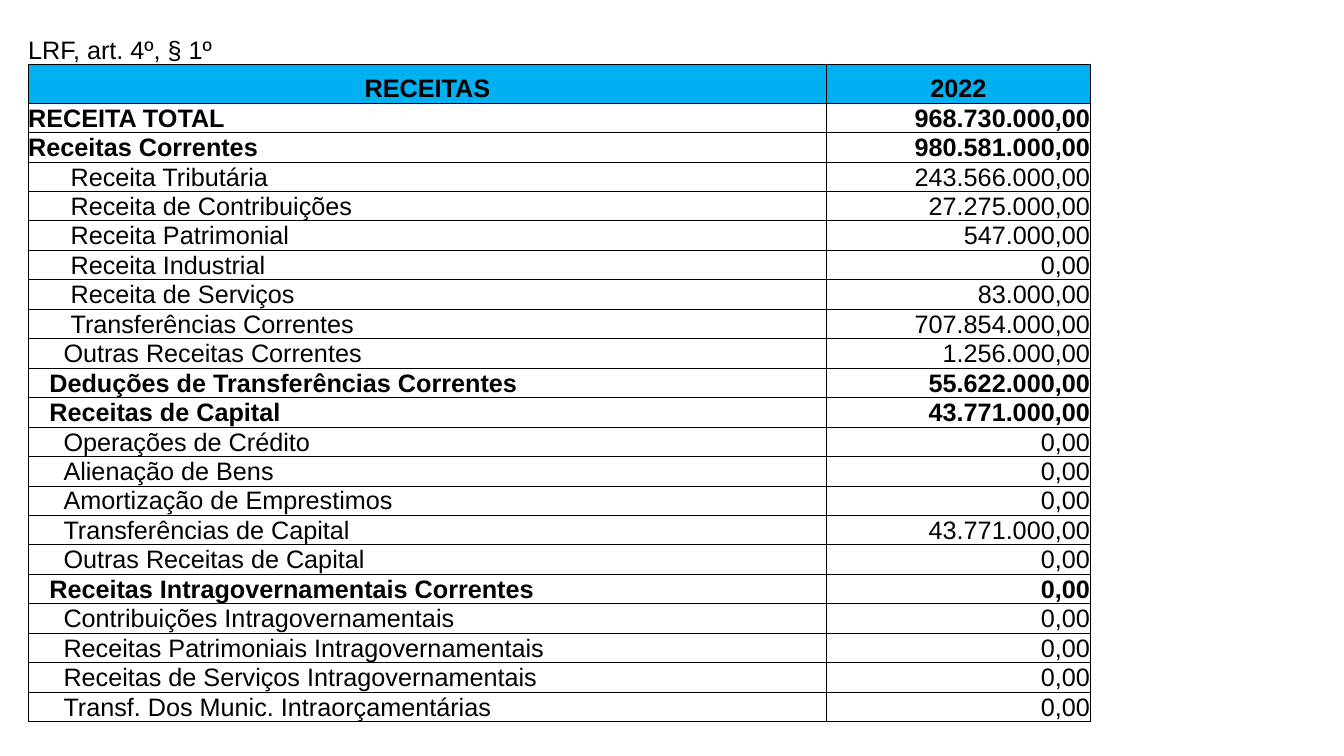
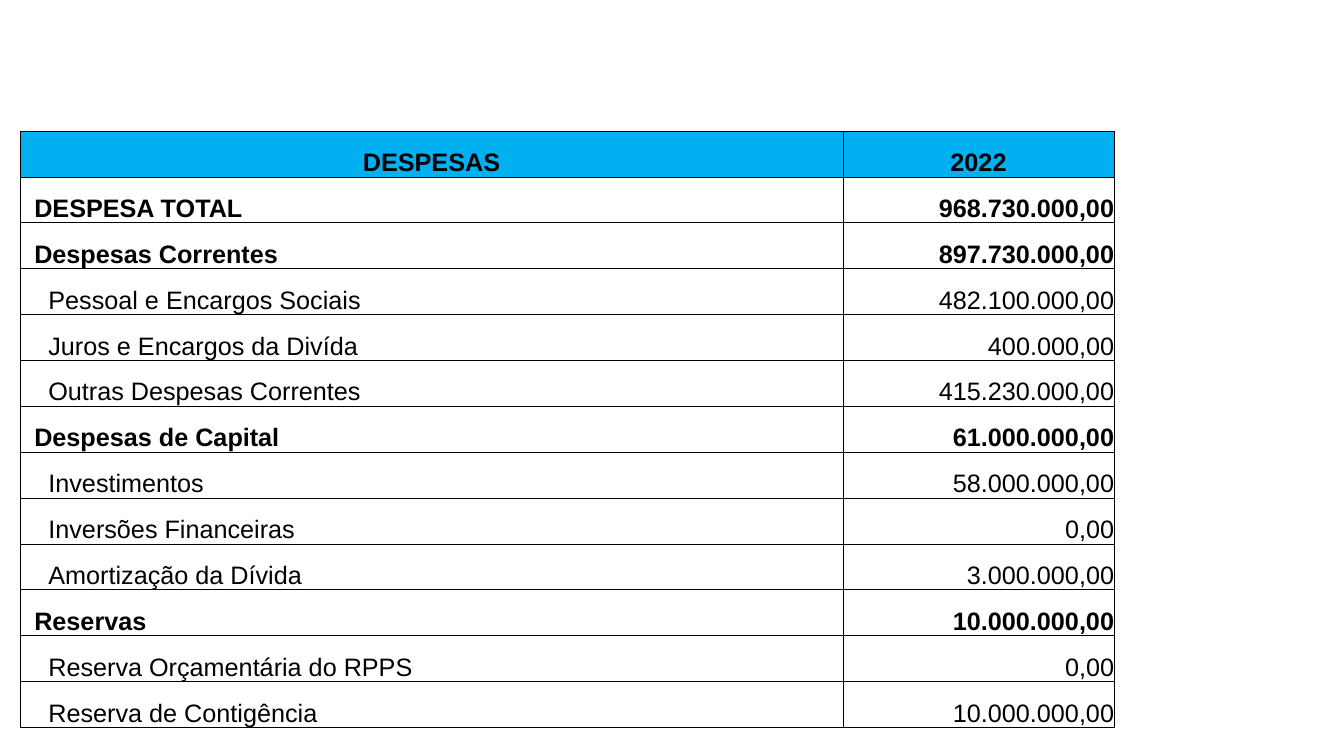
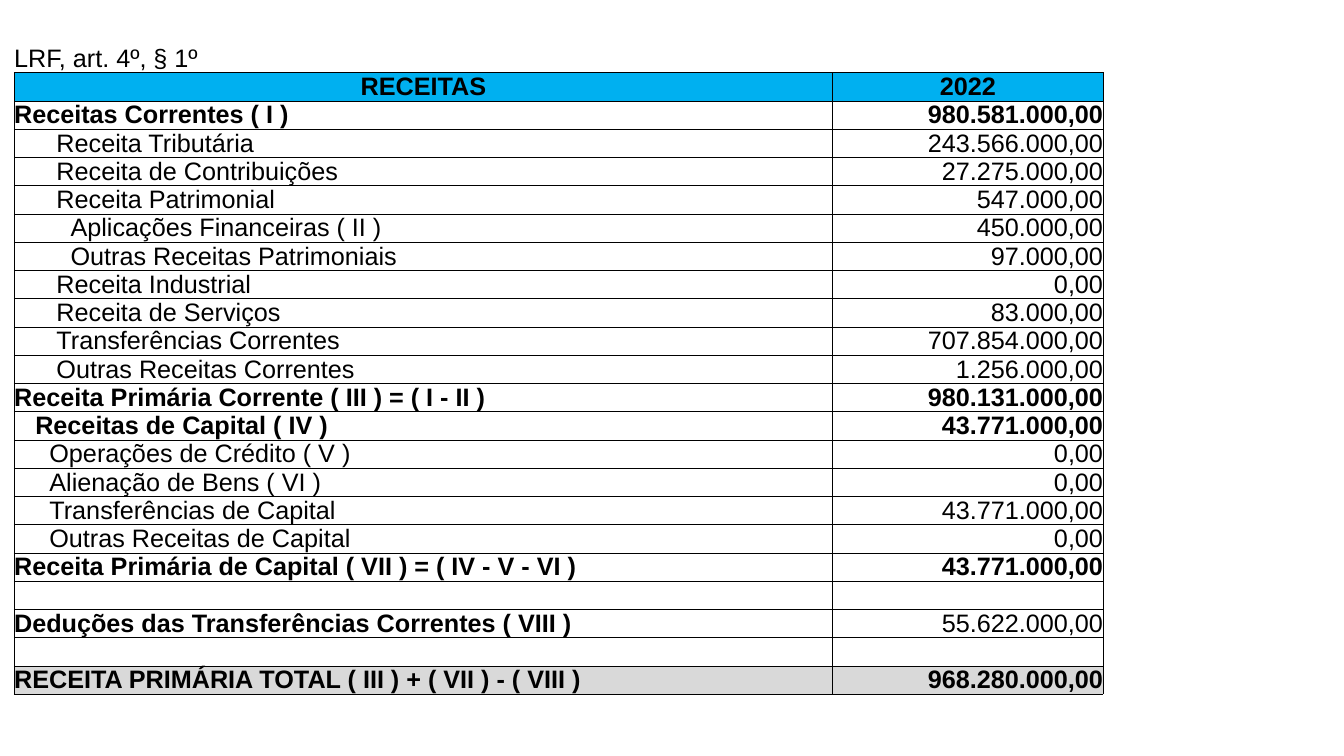
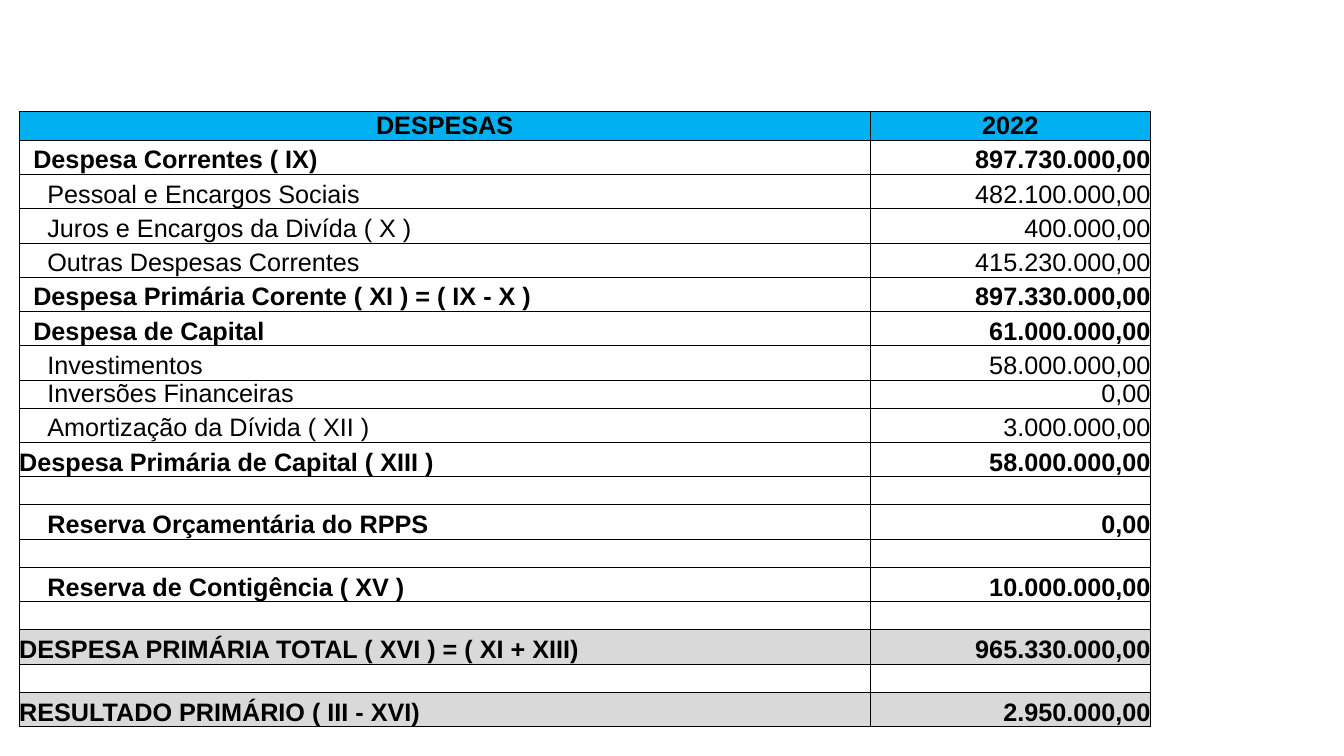
from dataclasses import dataclass
from functools import partial
from typing import Optional

from lxml import etree
from pptx import Presentation
from pptx import util as u
from pptx.dml.color import RGBColor
from pptx.enum import text
from pptx.oxml import ns

BLACK = RGBColor(0x00, 0x00, 0x00)
HEADER_BLUE = RGBColor(0x00, 0xB0, 0xF0)
TOTAL_GREY = RGBColor(0xD9, 0xD9, 0xD9)
FONT = "Arial"
TEXT_SIZE = u.Pt(18)
BLANK_SIZE = u.Pt(12)
BORDER = u.Pt(0.5)
INDENT_STEP = u.Inches(0.07)
ALL_SIDES = ("L", "R", "T", "B")
LEFT, CENTER, RIGHT = (text.PP_ALIGN.LEFT, text.PP_ALIGN.CENTER,
                       text.PP_ALIGN.RIGHT)


@dataclass(frozen=True)
class Line:
    """One table row; indent counts steps, height overrides the usual one."""
    label: str = ""
    amount: str = ""
    indent: int = 0
    bold: bool = False
    amount_bold: Optional[bool] = None
    fill: Optional[RGBColor] = None
    align: tuple = (LEFT, RIGHT)
    sides: tuple = ALL_SIDES
    height: Optional[float] = None


@dataclass(frozen=True)
class Budget:
    left: float
    top: float
    widths: tuple
    row_height: float
    lines: list


Heading = partial(Line, bold=True)
Total = partial(Line, bold=True, fill=TOTAL_GREY)
Header = partial(Line, amount="2022", bold=True, fill=HEADER_BLUE,
                 align=(CENTER, CENTER))
CAPTION = Line("LRF, art. 4º, § 1º", sides=("B",))
BLANK = Line(height=0.28)

REVENUE = Budget(0.28, 0.35, (7.92, 2.61), 6.14 / 21, [
    CAPTION,
    Header("RECEITAS", height=0.38),
    Heading("RECEITA TOTAL", "968.730.000,00"),
    Heading("Receitas Correntes", "980.581.000,00"),
    Line("Receita Tributária", "243.566.000,00", 6),
    Line("Receita de Contribuições", "27.275.000,00", 6),
    Line("Receita Patrimonial", "547.000,00", 6),
    Line("Receita Industrial", "0,00", 6),
    Line("Receita de Serviços", "83.000,00", 6),
    Line("Transferências Correntes", "707.854.000,00", 6),
    Line("Outras Receitas Correntes", "1.256.000,00", 5),
    Heading("Deduções de Transferências Correntes", "55.622.000,00", 3),
    Heading("Receitas de Capital", "43.771.000,00", 3),
    Line("Operações de Crédito", "0,00", 5),
    Line("Alienação de Bens", "0,00", 5),
    Line("Amortização de Emprestimos", "0,00", 5),
    Line("Transferências de Capital", "43.771.000,00", 5),
    Line("Outras Receitas de Capital", "0,00", 5),
    Heading("Receitas Intragovernamentais Correntes", "0,00", 3),
    Line("Contribuições Intragovernamentais", "0,00", 5),
    Line("Receitas Patrimoniais Intragovernamentais", "0,00", 5),
    Line("Receitas de Serviços Intragovernamentais", "0,00", 5),
    Line("Transf. Dos Munic. Intraorçamentárias", "0,00", 5),
])

EXPENSES = Budget(0.2, 1.3, (8.16, 2.69), 5.92 / 13, [
    Header("DESPESAS"),
    Heading("DESPESA TOTAL", "968.730.000,00", 2),
    Heading("Despesas Correntes", "897.730.000,00", 2),
    Line("Pessoal e Encargos Sociais", "482.100.000,00", 4),
    Line("Juros e Encargos da Divída", "400.000,00", 4),
    Line("Outras Despesas Correntes", "415.230.000,00", 4),
    Heading("Despesas de Capital", "61.000.000,00", 2),
    Line("Investimentos", "58.000.000,00", 4),
    Line("Inversões Financeiras", "0,00", 4),
    Line("Amortização da Dívida", "3.000.000,00", 4),
    Heading("Reservas", "10.000.000,00", 2),
    Line("Reserva Orçamentária do RPPS", "0,00", 4),
    Line("Reserva de Contigência", "10.000.000,00", 4),
])

PRIMARY_REVENUE = Budget(0.14, 0.44, (8.12, 2.68), 6.45 / 23, [
    CAPTION,
    Header("RECEITAS"),
    Heading("Receitas Correntes ( I )", "980.581.000,00"),
    Line("Receita Tributária", "243.566.000,00", 6),
    Line("Receita de Contribuições", "27.275.000,00", 6),
    Line("Receita Patrimonial", "547.000,00", 6),
    Line("Aplicações Financeiras ( II )", "450.000,00", 8),
    Line("Outras Receitas Patrimoniais", "97.000,00", 8),
    Line("Receita Industrial", "0,00", 6),
    Line("Receita de Serviços", "83.000,00", 6),
    Line("Transferências Correntes", "707.854.000,00", 6),
    Line("Outras Receitas Correntes", "1.256.000,00", 6),
    Heading("Receita Primária Corrente ( III ) = ( I - II )", "980.131.000,00"),
    Heading("Receitas de Capital ( IV )", "43.771.000,00", 3),
    Line("Operações de Crédito ( V )", "0,00", 5),
    Line("Alienação de Bens ( VI )", "0,00", 5),
    Line("Transferências de Capital", "43.771.000,00", 5),
    Line("Outras Receitas de Capital", "0,00", 5),
    Heading("Receita Primária de Capital ( VII ) = ( IV - V - VI )",
            "43.771.000,00"),
    BLANK,
    Heading("Deduções das Transferências Correntes ( VIII )", "55.622.000,00",
            amount_bold=False),
    BLANK,
    Total("RECEITA PRIMÁRIA TOTAL ( III ) + ( VII ) - ( VIII )",
          "968.280.000,00"),
])

PRIMARY_EXPENSES = Budget(0.19, 1.1, (8.44, 2.78), 0.34, [
    Header("DESPESAS", height=0.29),
    Heading("Despesa Correntes ( IX)", "897.730.000,00", 2),
    Line("Pessoal e Encargos Sociais", "482.100.000,00", 4),
    Line("Juros e Encargos da Divída ( X )", "400.000,00", 4),
    Line("Outras Despesas Correntes", "415.230.000,00", 4),
    Heading("Despesa Primária Corente ( XI ) = ( IX - X )",
            "897.330.000,00", 2),
    Heading("Despesa de Capital", "61.000.000,00", 2),
    Line("Investimentos", "58.000.000,00", 4),
    Line("Inversões Financeiras", "0,00", 4, height=0.28),
    Line("Amortização da Dívida ( XII )", "3.000.000,00", 4),
    Heading("Despesa Primária de Capital ( XIII )", "58.000.000,00"),
    BLANK,
    Heading("Reserva Orçamentária do RPPS", "0,00", 4),
    BLANK,
    Heading("Reserva de Contigência ( XV )", "10.000.000,00", 4),
    BLANK,
    Total("DESPESA PRIMÁRIA TOTAL ( XVI ) = ( XI + XIII)", "965.330.000,00"),
    BLANK,
    Total("RESULTADO PRIMÁRIO ( III - XVI)", "2.950.000,00"),
])


def set_borders(cell, sides: tuple) -> None:
    """Draw the given sides in black; must run before the cell's fill is set."""
    tc_pr = cell._tc.get_or_add_tcPr()
    for side in ALL_SIDES:
        ln = etree.SubElement(tc_pr, ns.qn(f"a:ln{side}"), w=str(int(BORDER)))
        if side in sides:
            solid = etree.SubElement(ln, ns.qn("a:solidFill"))
            etree.SubElement(solid, ns.qn("a:srgbClr"), val=str(BLACK))
        else:
            etree.SubElement(ln, ns.qn("a:noFill"))


def format_cell(cell, line: Line) -> None:
    cell.margin_left = cell.margin_right = 0
    cell.margin_top = cell.margin_bottom = 0
    cell.vertical_anchor = text.MSO_ANCHOR.BOTTOM
    set_borders(cell, line.sides)
    if line.fill is None:
        cell.fill.background()
    else:
        cell.fill.solid()
        cell.fill.fore_color.rgb = line.fill


def write_cell(cell, words: str, align, bold: bool, indent: int = 0) -> None:
    p = cell.text_frame.paragraphs[0]
    if not words:
        # An empty paragraph takes its height from its end mark.
        etree.SubElement(p._p, ns.qn("a:endParaRPr"),
                         sz=str(int(BLANK_SIZE.pt * 100)))
        return
    p.alignment = align
    if indent:
        p._p.get_or_add_pPr().set("marL", str(indent * INDENT_STEP))
    r = p.add_run()
    r.text = words
    r.font.name, r.font.size, r.font.bold = FONT, TEXT_SIZE, bold
    r.font.color.rgb = BLACK


def add_budget_slide(prs, budget: Budget) -> None:
    s = prs.slides.add_slide(prs.slide_layouts[6])
    heights = [line.height or budget.row_height for line in budget.lines]
    table = s.shapes.add_table(
        len(budget.lines), len(budget.widths),
        u.Inches(budget.left), u.Inches(budget.top),
        u.Inches(sum(budget.widths)), u.Inches(sum(heights))).table
    table.first_row = table.horz_banding = False
    for column, width in zip(table.columns, budget.widths):
        column.width = u.Inches(width)
    for row, line, height in zip(table.rows, budget.lines, heights):
        row.height = u.Inches(height)
        label, amount = row.cells
        for cell in (label, amount):
            format_cell(cell, line)
        amount_bold = line.bold if line.amount_bold is None else line.amount_bold
        write_cell(label, line.label, line.align[0], line.bold, line.indent)
        write_cell(amount, line.amount, line.align[1], amount_bold)


def main() -> None:
    prs = Presentation()
    prs.slide_width, prs.slide_height = u.Inches(13.33), u.Inches(7.5)
    for budget in (REVENUE, EXPENSES, PRIMARY_REVENUE, PRIMARY_EXPENSES):
        add_budget_slide(prs, budget)
    prs.save("out.pptx")


if __name__ == "__main__":
    main()
